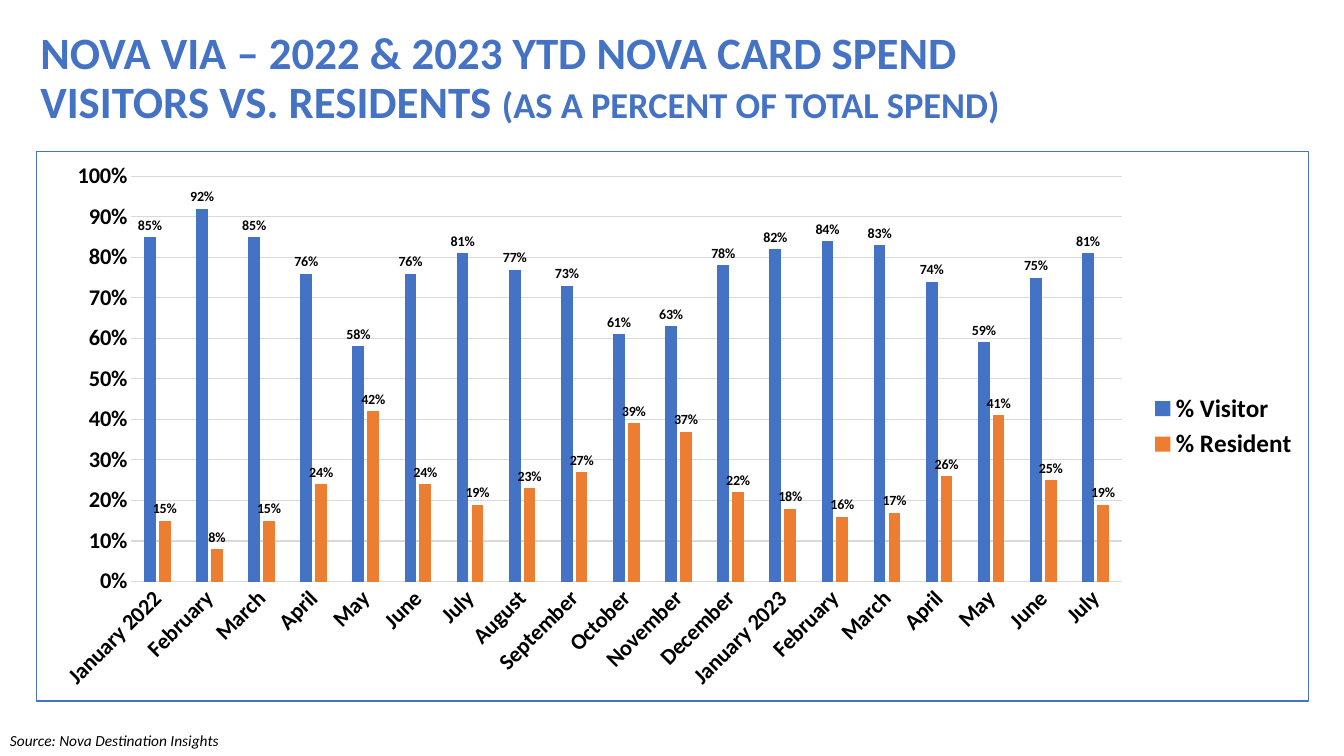
from lxml import etree
from pptx import Presentation
from pptx import util as u
from pptx.chart import data as chart_data
from pptx.dml import color
from pptx.enum import chart as ch
from pptx.enum import text
from pptx.oxml import parse_xml
from pptx.oxml import ns

BLUE, ORANGE, GREY, BLACK = "4472C4", "ED7D31", "D9D9D9", "000000"


def rgb(value):
    return color.RGBColor.from_string(value)


def style(font, size, hue=BLACK, bold=False, italic=False):
    font.name = "Calibri"
    font.size = u.Pt(size)
    font.bold = bold
    font.italic = italic
    font.color.rgb = rgb(hue)


prs = Presentation()
prs.slide_width, prs.slide_height = u.Inches(13.33), u.Inches(7.5)
s = prs.slides.add_slide(prs.slide_layouts[5])

title = s.shapes.title
title.left, title.top = u.Inches(0.3), u.Inches(0.36)
title.width, title.height = u.Inches(10), u.Inches(0.86)
tf = title.text_frame
tf.word_wrap = True
tf.auto_size = text.MSO_AUTO_SIZE.NONE
tf.vertical_anchor = text.MSO_ANCHOR.MIDDLE
p = tf.paragraphs[0]
p.text = "NOVA VIA – 2022 & 2023 YTD NOVA CARD SPEND\vVISITORS VS. RESIDENTS "
p.alignment = text.PP_ALIGN.LEFT
p.line_spacing = 0.9
for r in p.runs:
    style(r.font, 32, BLUE, bold=True)
r = p.add_run()
r.text = "(AS A PERCENT OF TOTAL SPEND)"
style(r.font, 26, BLUE, bold=True)

source = s.shapes.add_textbox(u.Inches(0), u.Inches(7.2), u.Inches(6.67), u.Inches(0.29))
tf = source.text_frame
tf.word_wrap = True
tf.text = "Source: Nova Destination Insights"
style(tf.paragraphs[0].runs[0].font, 11, italic=True)

months = ["January", "February", "March", "April", "May", "June", "July",
          "August", "September", "October", "November", "December"]
visitors = [0.85, 0.92, 0.85, 0.76, 0.58, 0.76, 0.81, 0.77, 0.73, 0.61,
            0.63, 0.78, 0.82, 0.84, 0.83, 0.74, 0.59, 0.75, 0.81]
cd = chart_data.CategoryChartData(number_format="0%")
cd.categories = ["January 2022"] + months[1:] + ["January 2023"] + months[1:7]
cd.add_series("% Visitor", visitors)
cd.add_series("% Resident", [round(1 - v, 2) for v in visitors])

chart = s.shapes.add_chart(
    ch.XL_CHART_TYPE.COLUMN_CLUSTERED, u.Inches(0.36), u.Inches(1.5),
    u.Inches(12.62), u.Inches(5.46), cd).chart
style(chart.font, 10)
chart.has_title = False
chart.has_legend = True
chart.legend.position = ch.XL_LEGEND_POSITION.RIGHT
chart.legend.include_in_layout = False
style(chart.legend.font, 18, bold=True)

plot = chart.plots[0]
plot.gap_width, plot.overlap = 219, -27
plot.vary_by_categories = False
for series, hue in zip(plot.series, (BLUE, ORANGE)):
    series.format.fill.solid()
    series.format.fill.fore_color.rgb = rgb(hue)
    labels = series.data_labels
    labels.show_value = True
    labels.number_format = "0%"
    labels.number_format_is_linked = False
    labels.position = ch.XL_LABEL_POSITION.OUTSIDE_END
    style(labels.font, 10, bold=True)

cat, val = chart.category_axis, chart.value_axis
for axis in (cat, val):
    axis.major_tick_mark = axis.minor_tick_mark = ch.XL_TICK_MARK.NONE
    style(axis.tick_labels.font, 16, bold=True)
val.minimum_scale, val.maximum_scale, val.major_unit = 0, 1, 0.1
val.tick_labels.number_format = "0%"
val.tick_labels.number_format_is_linked = False
val.format.line.fill.background()
val.has_major_gridlines = True
for line in (cat.format.line, val.major_gridlines.format.line):
    line.color.rgb = rgb(GREY)
    line.width = u.Pt(0.75)
cat._element.find(ns.qn("c:txPr")).find(ns.qn("a:bodyPr")).set("rot", "-2700000")

border = parse_xml(
    f'<c:spPr {ns.nsdecls("c", "a")}><a:noFill/><a:ln w="{u.Pt(0.75)}">'
    f'<a:solidFill><a:srgbClr val="{BLUE}"/></a:solidFill></a:ln></c:spPr>')
chart._chartSpace.find(ns.qn("c:chart")).addnext(border)

prs.save("out.pptx")
